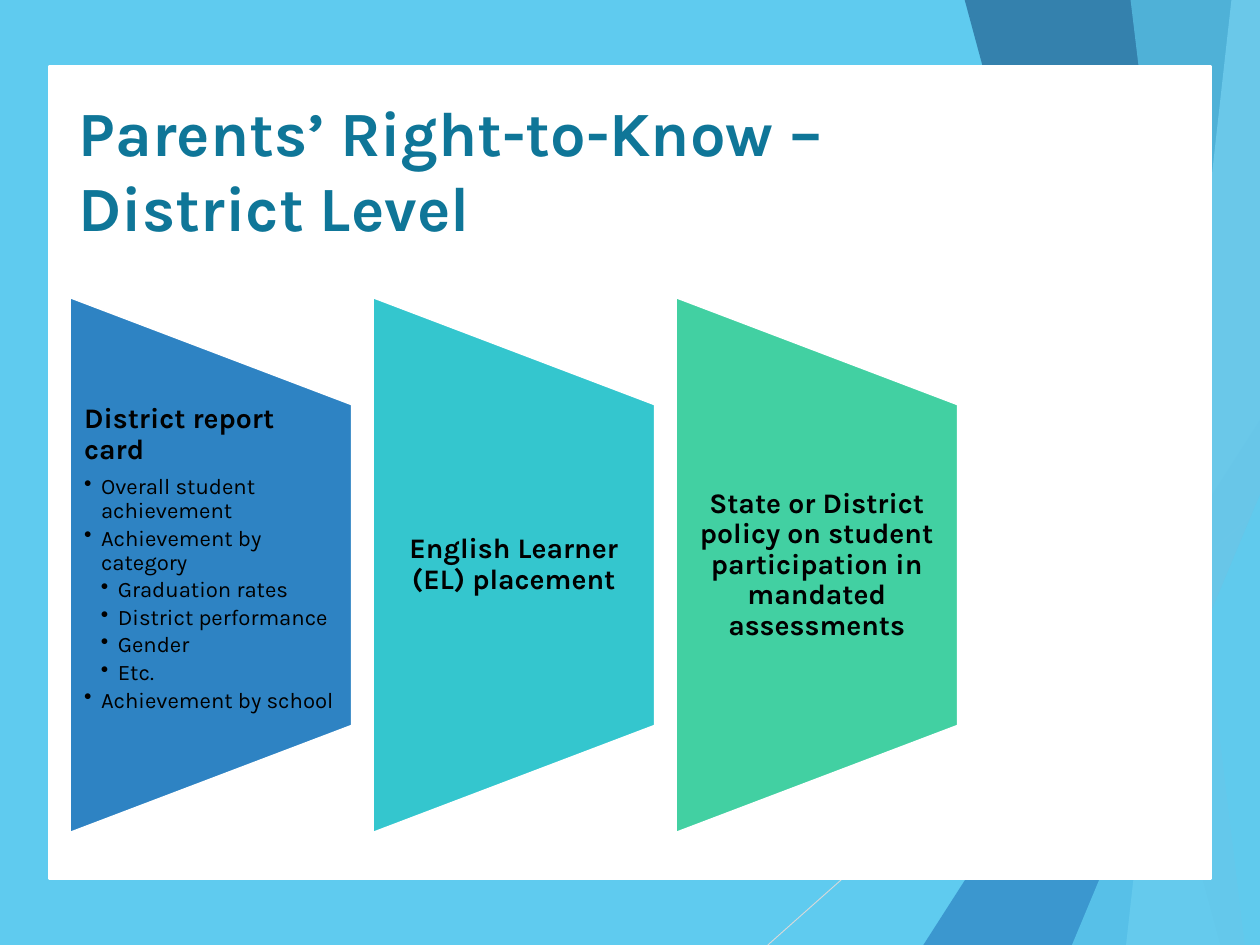
from dataclasses import dataclass

from lxml import etree
from pptx import Presentation, util as u
from pptx.dml.color import RGBColor
from pptx.enum import shapes, text
from pptx.oxml.ns import qn


@dataclass(frozen=True)
class Theme:
    font: str = "Karla"
    sky: str = "5FCBEF"
    pale: str = "9FE0F5"
    blue: str = "2E83C3"
    navy: str = "226292"
    teal: str = "34C6CE"
    green: str = "42D0A2"
    ink: str = "0F7698"
    black: str = "000000"
    white: str = "FFFFFF"
    gray: str = "D9D9D9"
    title: float = 51.2
    head: float = 23
    body: float = 18


COLS, ROWS = 128, 96
CELL = u.Inches(1) / 9


def cells(count):
    return u.Emu(round(count * CELL))


class Board:
    def __init__(self, slide, theme):
        self.slide = slide
        self.theme = theme

    def paint(self, shape, fill, alpha=100, edge=None, width=1):
        shape.shadow.inherit = False
        shape.fill.solid()
        shape.fill.fore_color.rgb = RGBColor.from_string(fill)
        if alpha < 100:
            tint = shape.fill._xPr.find(".//" + qn("a:srgbClr"))
            etree.SubElement(tint, qn("a:alpha"), val=str(alpha * 1000))
        if edge:
            shape.line.color.rgb = RGBColor.from_string(edge)
            shape.line.width = u.Pt(width)
        else:
            shape.line.fill.background()
        return shape

    def shape(self, kind, box, fill, **style):
        item = self.slide.shapes.add_shape(kind, *map(cells, box))
        return self.paint(item, fill, **style)

    def corner(self, left, top, fill, alpha):
        box = (left, top, COLS - left, ROWS - top)
        item = self.shape(shapes.MSO_SHAPE.ISOSCELES_TRIANGLE, box, fill, alpha=alpha)
        item.adjustments[0] = 1

    def band(self, top, foot, fill, alpha):
        points = [(top, 0), (COLS, 0), (COLS, ROWS), (foot, ROWS)]
        spots = [(cells(x), cells(y)) for x, y in points]
        form = self.slide.shapes.build_freeform(*spots[0])
        form.add_line_segments(spots[1:], close=True)
        self.paint(form.convert_to_shape(), fill, alpha)

    def line(self, start, end, color, width):
        item = self.slide.shapes.add_connector(
            shapes.MSO_CONNECTOR.STRAIGHT, *map(cells, start + end))
        item.line.color.rgb = RGBColor.from_string(color)
        item.line.width = u.Pt(width)
        etree.SubElement(item._element.spPr, qn("a:effectLst"))

    def label(self, box, lines, pads, middle=False):
        frame = self.slide.shapes.add_textbox(*map(cells, box)).text_frame
        frame.word_wrap = True
        frame.margin_left = frame.margin_right = u.Inches(pads[0])
        frame.margin_top = frame.margin_bottom = u.Inches(pads[1])
        anchor = text.MSO_ANCHOR
        frame.vertical_anchor = anchor.MIDDLE if middle else anchor.TOP
        frame.text = "\n".join(words for _, words in lines)
        for para, (level, _) in zip(frame.paragraphs, lines):
            para.level = level
            para.alignment = text.PP_ALIGN.CENTER if middle else text.PP_ALIGN.LEFT
        return frame.paragraphs

    def style(self, para, size, color, bold):
        for run in para.runs:
            run.font.name = self.theme.font
            run.font.size = u.Pt(size)
            run.font.bold = bold
            run.font.color.rgb = RGBColor.from_string(color)

    def title(self, box, words):
        para = self.label(box, [(0, words)], (0.1, 0.1))[0]
        self.style(para, self.theme.title, self.theme.ink, True)

    def card(self, left, fill, lines):
        theme = self.theme
        wide, tall, mid = 28.62, 54.36, 57.4
        box = (left + (wide - tall) / 2, mid - wide / 2, tall, wide)
        item = self.shape(shapes.MSO_SHAPE.FLOWCHART_MANUAL_OPERATION, box, fill,
                          edge=theme.white, width=1.5)
        item.rotation = 270
        high = tall * 0.6
        paras = self.label((left, mid - high / 2, wide, high), lines,
                           (0.16, 0), middle=len(lines) == 1)
        for para in paras:
            head = para.level == 0
            para.line_spacing = 0.9
            para.space_after = u.Pt(8 if head else 3)
            self.style(para, theme.head if head else theme.body, theme.black, head)
            if not head:
                self.bullet(para)

    def bullet(self, para):
        props = para._p.get_or_add_pPr()
        step = u.Inches(0.19)
        props.set("marL", str(step * para.level))
        props.set("indent", str(-step))
        etree.SubElement(props, qn("a:buChar"), char="•")


def main():
    deck = Presentation()
    deck.slide_width, deck.slide_height = cells(COLS), cells(ROWS)
    theme = Theme()
    board = Board(deck.slides.add_slide(deck.slide_layouts[6]), theme)
    rect = shapes.MSO_SHAPE.RECTANGLE

    board.shape(rect, (0, 0, COLS, ROWS), theme.sky)
    board.line((COLS, 51.6), (78, ROWS), theme.gray, 0.75)
    board.band(117.9, 96.4, theme.sky, 30)
    board.band(100.8, 113.5, theme.sky, 20)
    board.corner(93.8, 42.65, theme.blue, 72)
    board.band(98, 123.95, theme.navy, 70)
    board.band(125.1, 114.4, theme.pale, 70)
    board.band(114.85, 126.45, theme.sky, 65)
    board.corner(108.9, 50.25, theme.sky, 80)
    board.shape(rect, (5, 6.75, 118, 82.5), theme.white, edge=theme.white, width=1.75)

    board.title((7.1, 8.55, 90.3, 18.45), "Parents’ Right-to-Know – District Level")
    cards = [
        (theme.blue, [
            (0, "District report card"),
            (1, "Overall student achievement"),
            (1, "Achievement by category"),
            (2, "Graduation rates"),
            (2, "District performance"),
            (2, "Gender"),
            (2, "Etc."),
            (1, "Achievement by school"),
        ]),
        (theme.teal, [(0, "English Learner (EL) placement")]),
        (theme.green, [(0, "State or District policy on student participation "
                           "in mandated assessments")]),
    ]
    for index, (fill, lines) in enumerate(cards):
        board.card(7.11 + index * 30.78, fill, lines)

    deck.save("out.pptx")


if __name__ == "__main__":
    main()
